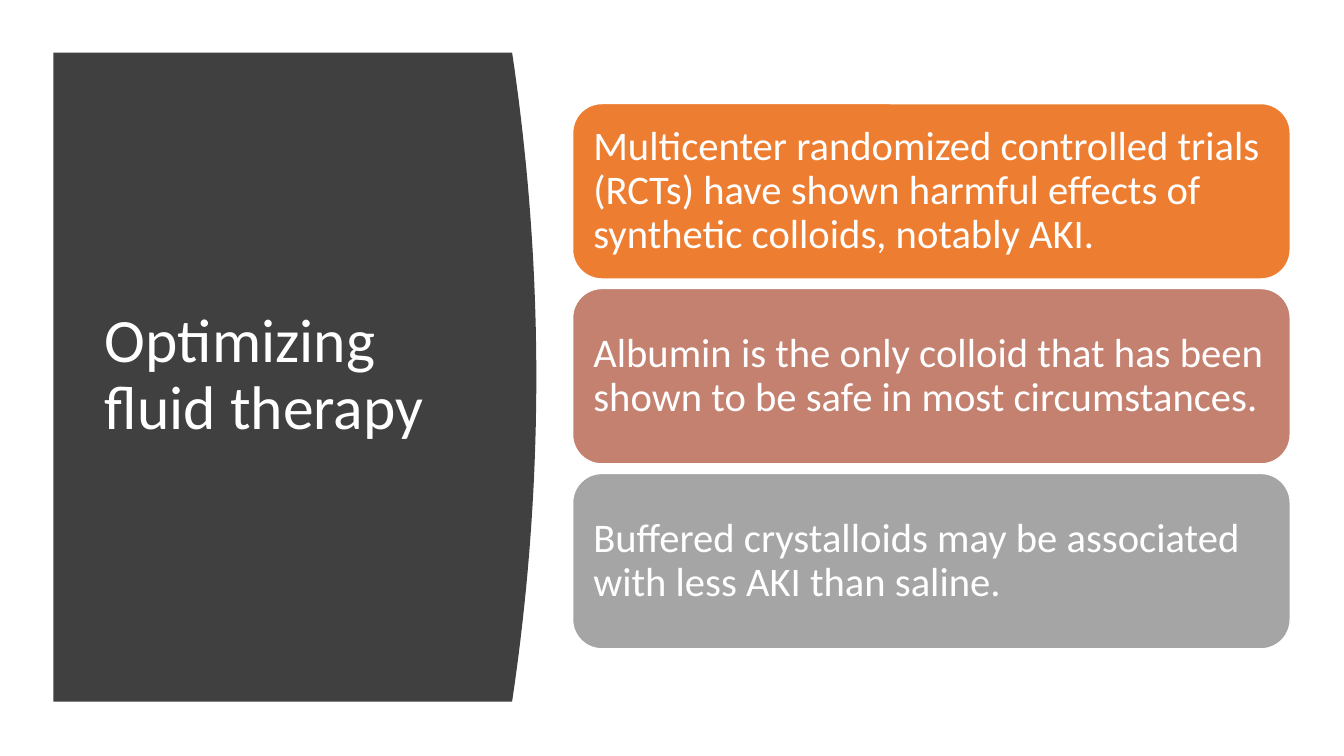
from dataclasses import dataclass

from pptx import Presentation
from pptx.dml.color import RGBColor
from pptx.enum.shapes import MSO_SHAPE
from pptx.enum.text import MSO_ANCHOR, MSO_AUTO_SIZE, PP_ALIGN
from pptx.util import Pt

ROUND = MSO_SHAPE.ROUNDED_RECTANGLE
MIDDLE = MSO_ANCHOR.MIDDLE
NO_FIT = MSO_AUTO_SIZE.NONE
LEFT = PP_ALIGN.LEFT


@dataclass(frozen=True)
class Theme:
    font: str = "Calibri"
    white: RGBColor = RGBColor(0xFF, 0xFF, 0xFF)
    dark: RGBColor = RGBColor(0x40, 0x40, 0x40)
    orange: RGBColor = RGBColor(0xED, 0x7D, 0x31)
    rose: RGBColor = RGBColor(0xC4, 0x81, 0x70)
    gray: RGBColor = RGBColor(0xA5, 0xA5, 0xA5)
    title: int = 44
    body: int = 29


theme = Theme()


def write(shape, text, size, inset):
    frame = shape.text_frame
    frame.word_wrap = True
    frame.auto_size = NO_FIT
    frame.vertical_anchor = MIDDLE
    frame.margin_left = frame.margin_right = Pt(inset)
    frame.margin_top = frame.margin_bottom = Pt(inset)
    para = frame.paragraphs[0]
    para.alignment = LEFT
    para.line_spacing = 0.9
    run = para.add_run()
    run.text = text
    run.font.name = theme.font
    run.font.size = Pt(size)
    run.font.color.rgb = theme.white


deck = Presentation()
deck.slide_width, deck.slide_height = Pt(960), Pt(540)
slide = deck.slides.add_slide(deck.slide_layouts[5])
shapes = slide.shapes

# Title
title = shapes.title
title.left, title.top = Pt(67.7), Pt(80)
title.width, title.height = Pt(269.3), Pt(377.3)
write(title, "Optimizing fluid therapy", theme.title, 7.2)

# Dark panel with a bowed right edge, behind the title
left, edge, bulge = 38.2, 365.8, 17.3
mid, half, steps = 269.3, 231.8, 20
curve = []
for step in range(-steps, steps + 1):
    t = step / steps
    curve.append((Pt(edge + bulge * (1 - t * t)), Pt(mid + half * t)))
pen = shapes.build_freeform(Pt(left), Pt(mid - half))
pen.add_line_segments(curve + [(Pt(left), Pt(mid + half))], close=True)
panel = pen.convert_to_shape()
panel.shadow.inherit = False
panel.fill.solid()
panel.fill.fore_color.rgb = theme.dark
panel.line.fill.background()
title.element.addprevious(panel.element)

# Three stacked cards
cards = [
    ("Multicenter randomized controlled trials (RCTs) have shown harmful "
     "effects of synthetic colloids, notably AKI.", theme.orange),
    ("Albumin is the only colloid that has been shown to be safe in most "
     "circumstances.", theme.rose),
    ("Buffered crystalloids may be associated with less AKI than saline.",
     theme.gray),
]
top, pitch = 74, 132.1
for row, (text, color) in enumerate(cards):
    card = shapes.add_shape(ROUND, Pt(409), Pt(top + row * pitch),
                            Pt(512.6), Pt(125.3))
    card.shadow.inherit = False
    card.fill.solid()
    card.fill.fore_color.rgb = color
    card.line.color.rgb = theme.white
    card.line.width = Pt(1)
    write(card, text, theme.body, 8.7)

deck.save("out.pptx")
